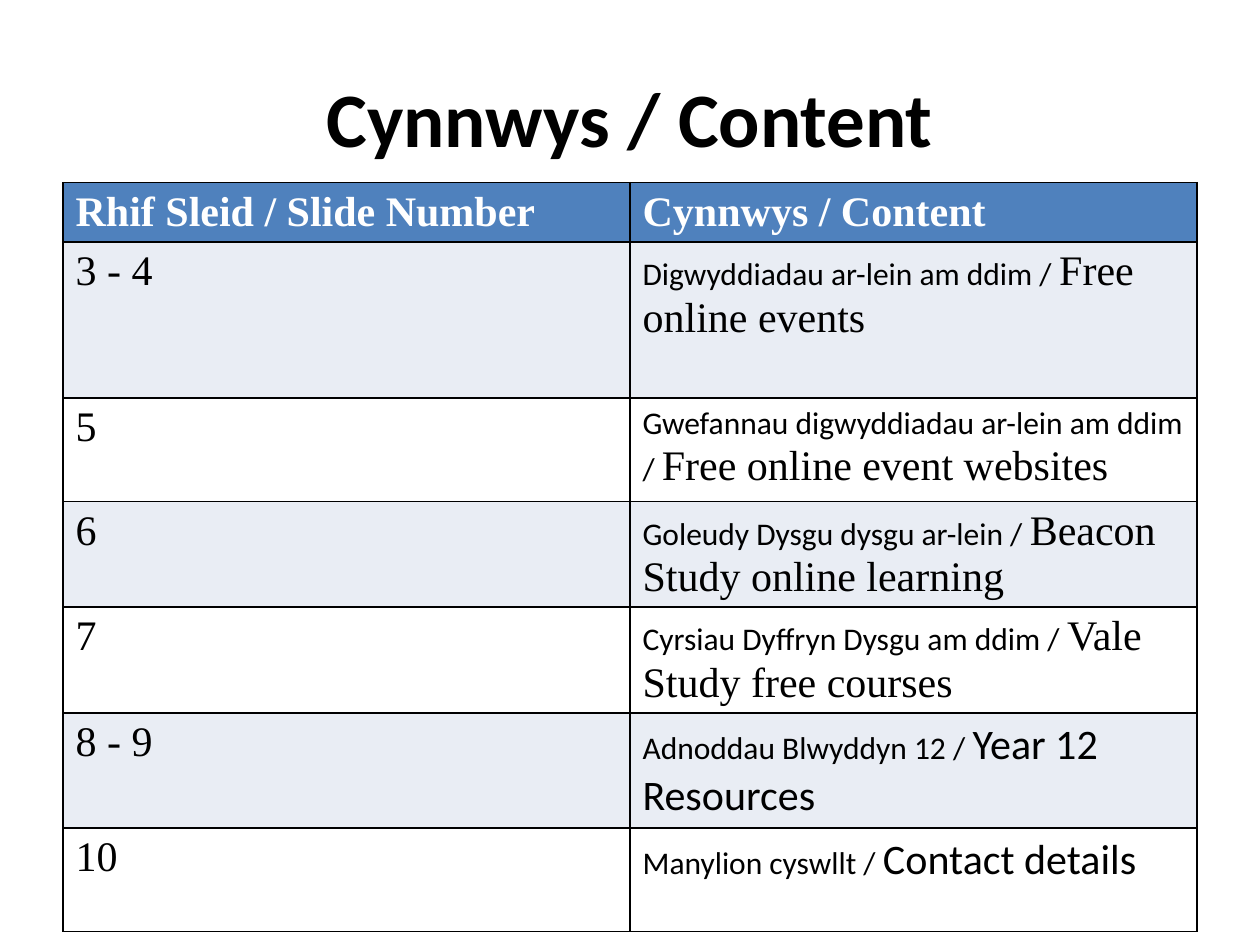
from dataclasses import dataclass

from lxml.etree import SubElement
from pptx import Presentation
from pptx.dml.color import RGBColor as Color
from pptx.enum.text import MSO_ANCHOR as Anchor, PP_ALIGN as Align
from pptx.oxml.ns import qn
from pptx.util import Inches, Pt


@dataclass(frozen=True)
class Theme:
    """Colours, fonts and type sizes of the slide."""
    black: str = "000000"
    white: str = "FFFFFF"
    header: str = "4F81BD"
    band: str = "E9EDF4"
    sans: str = "Calibri"
    serif: str = "Times New Roman"
    title_size: int = 44
    large: int = 24
    small: int = 18
    border: float = 1


class SlideBuilder:
    """Adds styled elements to the current slide."""

    def __init__(self, slide, theme):
        self.slide = slide
        self.theme = theme

    def format_run(self, run, font, size, color, bold=False):
        """Apply a font, size, colour and weight to a run."""
        run.font.name = font
        run.font.size = Pt(size)
        run.font.bold = bold
        run.font.color.rgb = Color.from_string(color)

    def title(self, text, left, top, width, height):
        """Place and format the title placeholder."""
        shape = self.slide.shapes.title
        shape.left, shape.top = Inches(left), Inches(top)
        shape.width, shape.height = Inches(width), Inches(height)
        frame = shape.text_frame
        frame.text = text
        frame.vertical_anchor = Anchor.MIDDLE
        paragraph = frame.paragraphs[0]
        paragraph.alignment = Align.CENTER
        self.format_run(paragraph.runs[0], self.theme.sans,
                        self.theme.title_size, self.theme.black, True)

    def border(self, cell):
        """Draw a thin line on all four sides of a cell."""
        properties = cell._tc.get_or_add_tcPr()
        for side in ("a:lnL", "a:lnR", "a:lnT", "a:lnB"):
            line = SubElement(properties, qn(side), w=str(Pt(self.theme.border)))
            fill = SubElement(line, qn("a:solidFill"))
            SubElement(fill, qn("a:srgbClr"), val=self.theme.black)

    def cell(self, cell, runs, fill, color, bold=False):
        """Fill a cell with runs given as text, font and size."""
        self.border(cell)
        cell.fill.solid()
        cell.fill.fore_color.rgb = Color.from_string(fill)
        paragraph = cell.text_frame.paragraphs[0]
        for text, font, size in runs:
            run = paragraph.add_run()
            run.text = text
            self.format_run(run, font, size, color, bold)

    def contents_table(self, headings, entries, heights, left, top, width):
        """Add a banded table of slide numbers and bilingual contents."""
        theme = self.theme
        table = self.slide.shapes.add_table(
            len(heights), len(headings), Inches(left), Inches(top),
            Inches(width), Inches(sum(heights))).table
        for row, height in zip(table.rows, heights):
            row.height = Inches(height)
        for column, heading in enumerate(headings):
            self.cell(table.cell(0, column), [(heading, theme.serif, theme.large)],
                      theme.header, theme.white, True)
        for row, (number, welsh, english, font) in enumerate(entries, 1):
            fill = theme.band if row % 2 else theme.white
            self.cell(table.cell(row, 0), [(number, theme.serif, theme.large)],
                      fill, theme.black)
            self.cell(table.cell(row, 1),
                      [(f"{welsh} / ", theme.sans, theme.small),
                       (english, font, theme.large)], fill, theme.black)


def main():
    """Build the contents slide."""
    theme = Theme()
    presentation = Presentation()
    presentation.slide_width, presentation.slide_height = Inches(10), Inches(7.5)
    slide = presentation.slides.add_slide(presentation.slide_layouts[5])
    builder = SlideBuilder(slide, theme)
    builder.title("Cynnwys / Content", 0.5, 0.3, 9, 1.25)
    entries = [
        ("3 - 4", "Digwyddiadau ar-lein am ddim", "Free online events", theme.serif),
        ("5", "Gwefannau digwyddiadau ar-lein am ddim",
         "Free online event websites", theme.serif),
        ("6", "Goleudy Dysgu dysgu ar-lein", "Beacon Study online learning", theme.serif),
        ("7", "Cyrsiau Dyffryn Dysgu am ddim", "Vale Study free courses", theme.serif),
        ("8 - 9", "Adnoddau Blwyddyn 12", "Year 12 Resources", theme.sans),
        ("10", "Manylion cyswllt", "Contact details", theme.sans),
    ]
    builder.contents_table(
        ["Rhif Sleid / Slide Number", "Cynnwys / Content"], entries,
        [0.47, 1.24, 0.82, 0.84, 0.84, 0.91, 0.82], 0.5, 1.45, 9)
    presentation.save("out.pptx")


if __name__ == "__main__":
    main()
